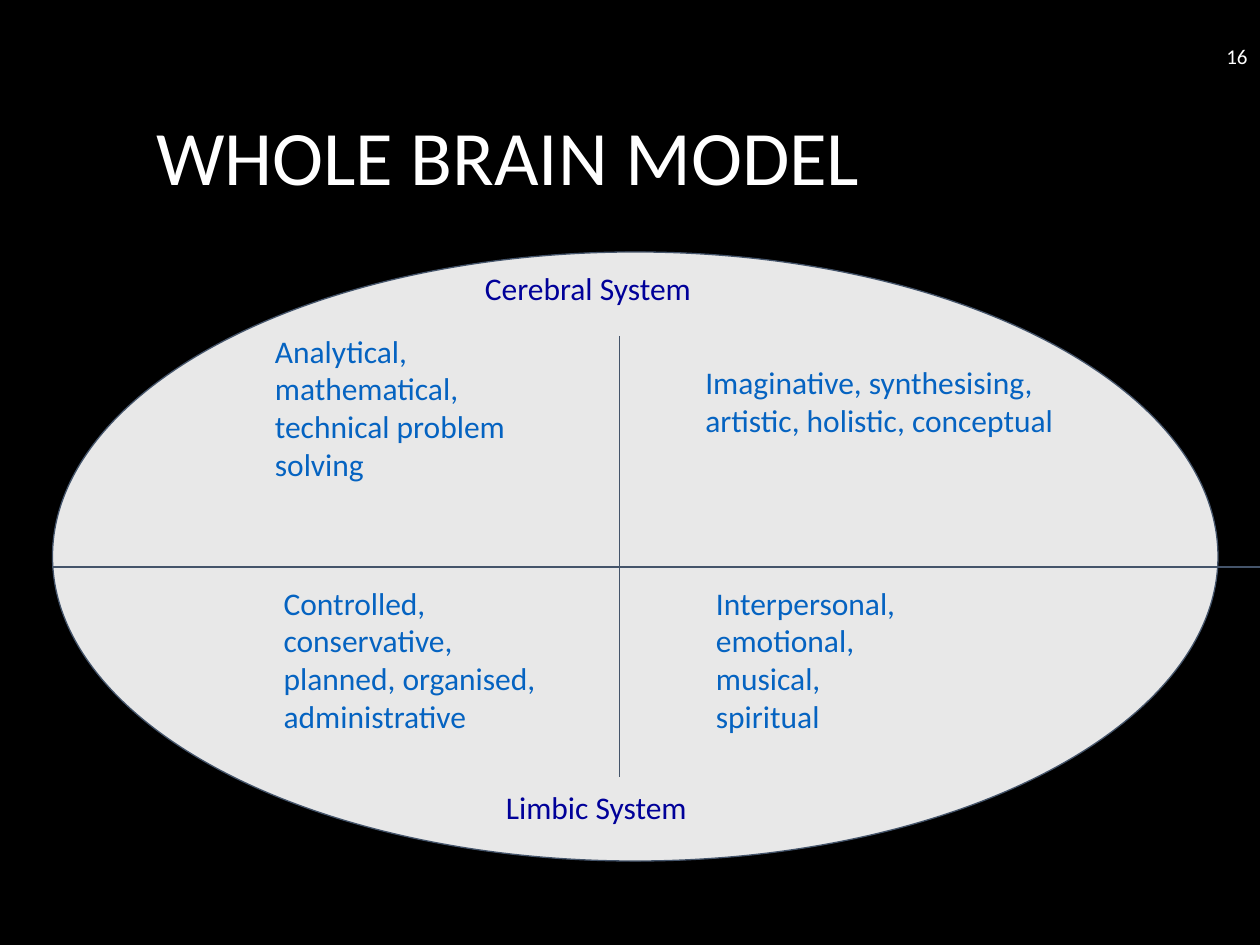
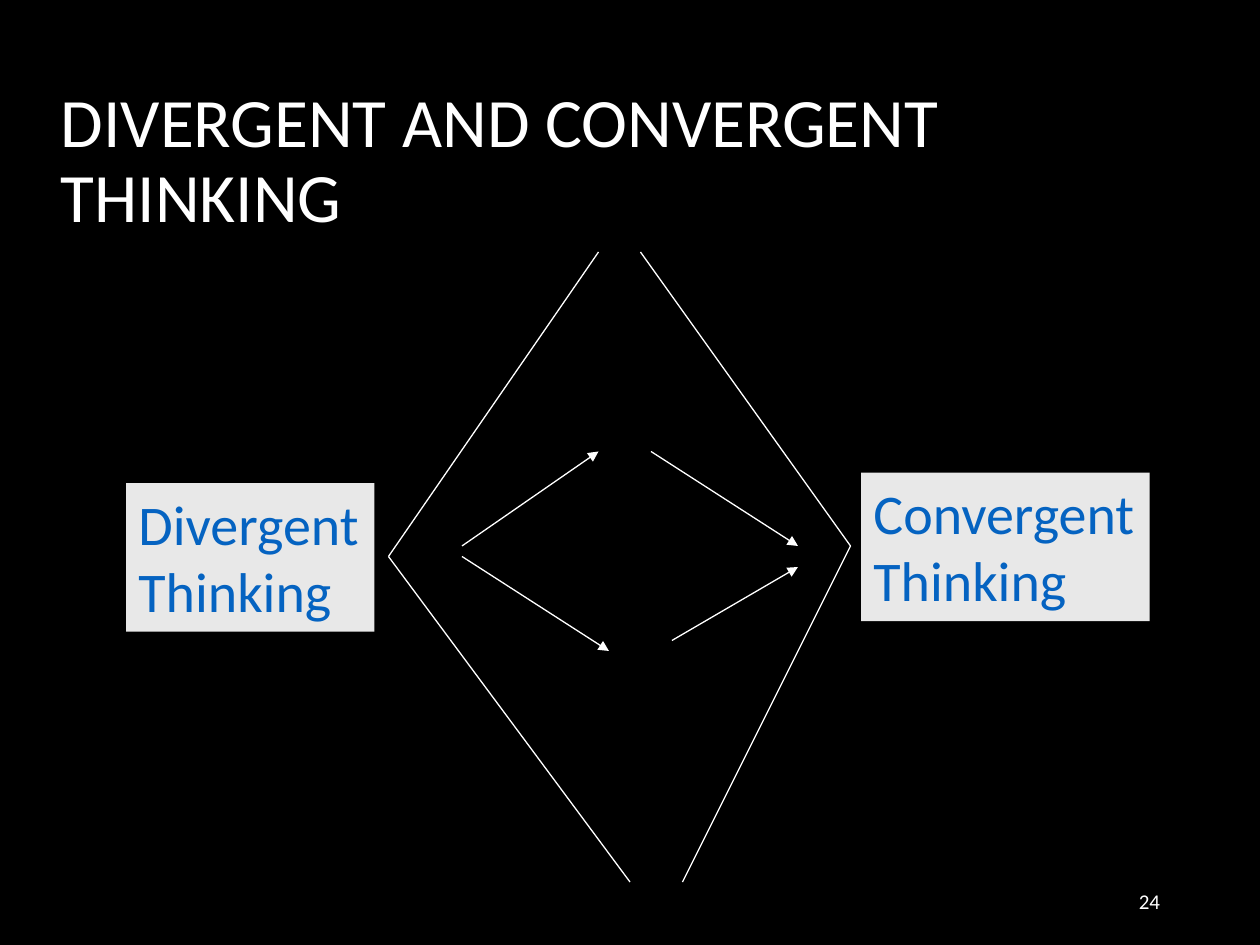
from lxml import etree
from pptx import Presentation
from pptx.dml.color import RGBColor
from pptx.enum.shapes import MSO_CONNECTOR, MSO_SHAPE
from pptx.enum.text import MSO_ANCHOR, PP_ALIGN
from pptx.oxml.ns import qn
from pptx.util import Pt

STRAIGHT = MSO_CONNECTOR.STRAIGHT
OVAL = MSO_SHAPE.OVAL
TOP, MIDDLE = MSO_ANCHOR.TOP, MSO_ANCHOR.MIDDLE
LEFT, RIGHT = PP_ALIGN.LEFT, PP_ALIGN.RIGHT

BLACK = RGBColor(0x00, 0x00, 0x00)
WHITE = RGBColor(0xFF, 0xFF, 0xFF)
PALE_GREY = RGBColor(0xE8, 0xE8, 0xE8)
SLATE = RGBColor(0x44, 0x54, 0x6A)
BLUE = RGBColor(0x05, 0x63, 0xC1)
NAVY = RGBColor(0x00, 0x00, 0x99)

FONT = "Calibri"
LINE_WIDTH = Pt(0.75)
TITLE_ONLY = 5


def write_text(shape, text, size, color, align=LEFT, anchor=TOP, wrap=True, spacing=None):
    frame = shape.text_frame
    frame.text = text
    frame.word_wrap = wrap
    frame.vertical_anchor = anchor
    font_format = {"name": FONT, "size": Pt(size), "bold": False}
    for paragraph in frame.paragraphs:
        paragraph.alignment = align
        paragraph.line_spacing = spacing
        for run in paragraph.runs:
            for attribute, value in font_format.items():
                setattr(run.font, attribute, value)
            run.font.color.rgb = color


def add_line(slide, start, end, color, arrow=False):
    line = slide.shapes.add_connector(STRAIGHT, *map(Pt, start + end))
    line.line.color.rgb = color
    line.line.width = LINE_WIDTH
    if arrow:
        etree.SubElement(line.line._get_or_add_ln(), qn("a:tailEnd"), type="triangle")
    etree.SubElement(line._element.spPr, qn("a:effectLst"))


presentation = Presentation()
presentation.slide_width = Pt(720)
presentation.slide_height = Pt(540)

# Background, title and number of each slide
slide_heads = [
    ("WHOLE BRAIN MODEL", 44, (82, 55, 553, 73), "16", (552, 17.5, 168, 29)),
    ("DIVERGENT AND CONVERGENT THINKING", 39.6, (27.5, 48, 663, 90), "24", (508, 500.5, 162, 29)),
]
for title_text, title_size, title_box, number, number_box in slide_heads:
    slide = presentation.slides.add_slide(presentation.slide_layouts[TITLE_ONLY])
    slide.background.fill.solid()
    slide.background.fill.fore_color.rgb = BLACK
    title = slide.shapes.title
    title.left, title.top, title.width, title.height = map(Pt, title_box)
    write_text(title, title_text, title_size, WHITE, anchor=MIDDLE, spacing=0.9)
    number_label = slide.shapes.add_textbox(*map(Pt, number_box))
    write_text(number_label, number, 12, WHITE, align=RIGHT, anchor=MIDDLE)

brain_slide, thinking_slide = presentation.slides

# Whole brain model: an ellipse cut into four quadrants
brain = brain_slide.shapes.add_shape(OVAL, Pt(30), Pt(144), Pt(666), Pt(348))
brain.shadow.inherit = False
brain.fill.solid()
brain.fill.fore_color.rgb = PALE_GREY
brain.line.color.rgb = SLATE
brain.line.width = LINE_WIDTH

add_line(brain_slide, (30, 324), (720, 324), SLATE)
add_line(brain_slide, (354, 192), (354, 444), SLATE)

brain_labels = [
    ("Analytical, mathematical, technical problem solving", (150, 186, 186, 94), BLUE),
    ("Imaginative, synthesising, artistic, holistic, conceptual", (396, 204, 252, 51), BLUE),
    ("Controlled,\nconservative,\nplanned, organised,\vadministrative", (155, 330, 252, 116), BLUE),
    ("Interpersonal,\nemotional,\nmusical,\nspiritual", (402, 330, 134, 94), BLUE),
    ("Cerebral System", (270, 150, 192, 29), NAVY),
    ("Limbic System", (282, 447, 231, 29), NAVY),
]
for text, box, color in brain_labels:
    label = brain_slide.shapes.add_textbox(*map(Pt, box))
    write_text(label, text, 18, color)

# Divergent and convergent thinking: two boxes around an open diamond
thinking_boxes = [
    ("Divergent\nThinking", (72, 276, 142, 85)),
    ("Convergent\nThinking", (492, 270, 165, 85)),
]
for text, box in thinking_boxes:
    thinking_box = thinking_slide.shapes.add_textbox(*map(Pt, box))
    thinking_box.fill.solid()
    thinking_box.fill.fore_color.rgb = PALE_GREY
    write_text(thinking_box, text, 32, BLUE, wrap=False)

left_corner, right_corner = (222, 318), (486, 312)
diamond_sides = [
    (left_corner, (342, 144)),
    (left_corner, (360, 504)),
    ((366, 144), right_corner),
    ((390, 504), right_corner),
]
for start, end in diamond_sides:
    add_line(thinking_slide, start, end, WHITE)

thinking_arrows = [
    ((264, 312), (342, 258)),
    ((264, 318), (348, 372)),
    ((372, 258), (456, 312)),
    ((384, 366), (456, 324)),
]
for start, end in thinking_arrows:
    add_line(thinking_slide, start, end, WHITE, arrow=True)

presentation.save("out.pptx")
